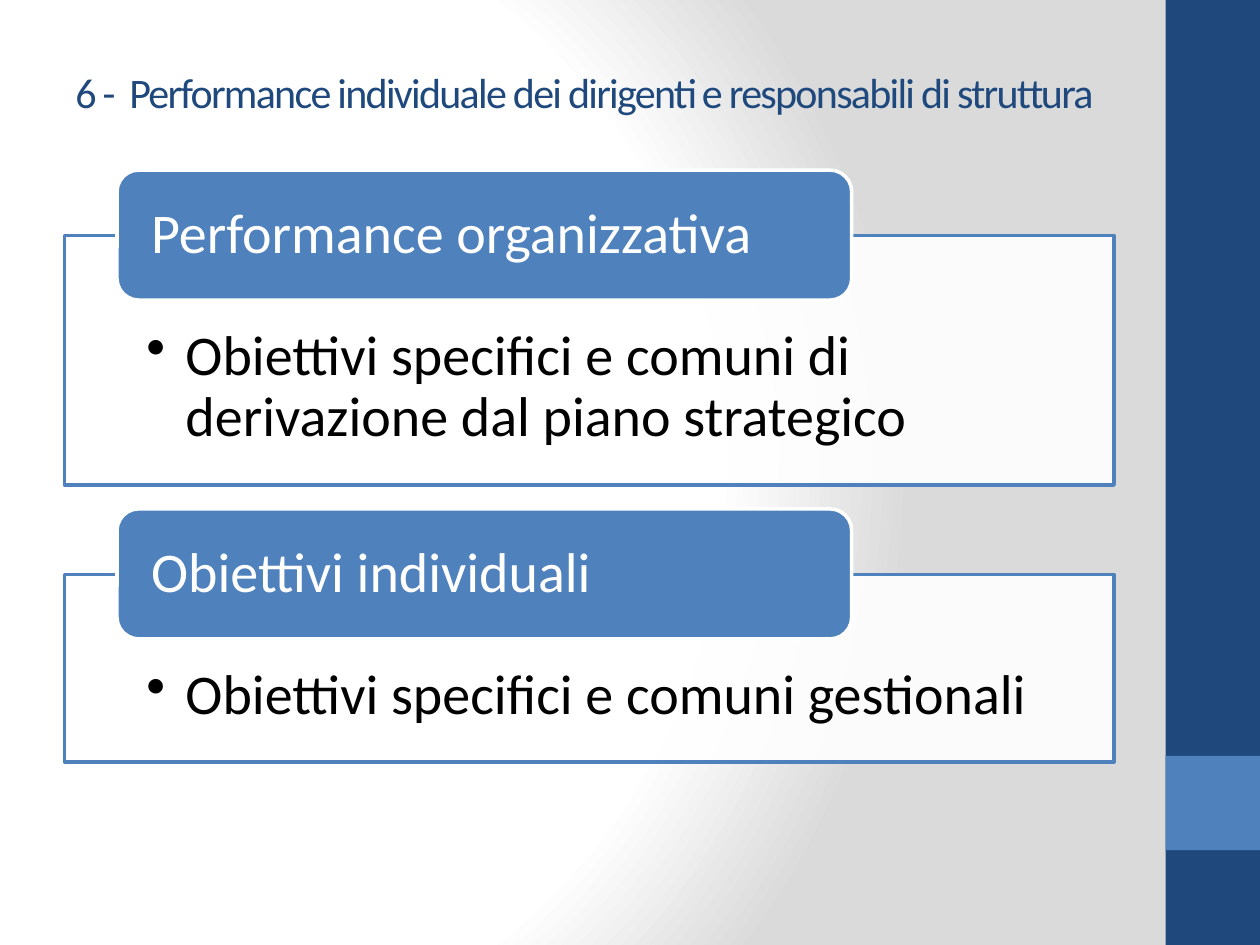
import pptx
import pptx.dml.color
import pptx.enum.shapes
import pptx.enum.text
import pptx.oxml
import pptx.oxml.ns
import pptx.util

Cm = pptx.util.Cm
Pt = pptx.util.Pt
qn = pptx.oxml.ns.qn
Shapes = pptx.enum.shapes.MSO_SHAPE
Anchor = pptx.enum.text.MSO_ANCHOR

COLOURS = {
    "navy": "1F497D",
    "blue": "4F81BD",
    "white": "FFFFFF",
    "grey": "DADADA",
    "black": "000000",
}
GRADIENT = [(0, "white"), (75, "white"), (100, "grey")]
CARDS = [
    ("Performance organizzativa",
     "Obiettivi specifici e comuni di derivazione dal piano strategico", 5.03),
    ("Obiettivi individuali", "Obiettivi specifici e comuni gestionali", 3.78),
]
CARD_LEFT, CARD_TOP, CARD_WIDTH, CARD_GAP = 1.3, 4.75, 21.16, 1.8
LABEL_OFFSET, LABEL_RISE, LABEL_WIDTH, LABEL_HEIGHT = 1.06, 1.32, 14.81, 2.62


class SlideBuilder:
    font = "Calibri"
    body_size = 32
    title_size = 24

    def __init__(self, slide):
        self.slide = slide

    def colour(self, name):
        return pptx.dml.color.RGBColor.from_string(COLOURS[name])

    def background(self):
        self.slide.background.fill.gradient()
        gradient = self.slide.element.find(".//" + qn("a:gradFill"))
        for child in list(gradient):
            gradient.remove(child)
        stops = "".join(
            f'<a:gs pos="{position * 1000}"><a:srgbClr val="{COLOURS[name]}"/></a:gs>'
            for position, name in GRADIENT)
        source = pptx.oxml.parse_xml(
            f'<a:gradFill {pptx.oxml.ns.nsdecls("a")}><a:gsLst>{stops}</a:gsLst>'
            '<a:path path="circle"><a:fillToRect l="20000" t="50000" r="100000" b="50000"/>'
            '</a:path></a:gradFill>')
        for child in list(source):
            gradient.append(child)

    def box(self, kind, left, top, width, height, fill, line=None, opacity=100):
        shape = self.slide.shapes.add_shape(
            kind, Cm(left), Cm(top), Cm(width), Cm(height))
        shape.shadow.inherit = False
        shape.fill.solid()
        shape.fill.fore_color.rgb = self.colour(fill)
        if opacity < 100:
            colour = shape.element.spPr.find(qn("a:solidFill"))[0]
            alpha = colour.makeelement(qn("a:alpha"), {"val": str(opacity * 1000)})
            colour.append(alpha)
        if line:
            shape.line.color.rgb = self.colour(line)
            shape.line.width = Pt(2)
        else:
            shape.line.fill.background()
        return shape

    def text(self, shape, text, size, colour, anchor, insets=None):
        frame = shape.text_frame
        frame.word_wrap = True
        frame.vertical_anchor = anchor
        if insets:
            (frame.margin_left, frame.margin_top,
             frame.margin_right, frame.margin_bottom) = map(Cm, insets)
        paragraph = frame.paragraphs[0]
        paragraph.alignment = pptx.enum.text.PP_ALIGN.LEFT
        run = paragraph.add_run()
        run.text = text
        run.font.name = self.font
        run.font.size = Pt(size)
        run.font.color.rgb = self.colour(colour)
        return paragraph

    def title(self, text):
        shape = self.slide.shapes.add_textbox(Cm(1.27), Cm(0.76), Cm(21.16), Cm(2.16))
        paragraph = self.text(shape, text, self.title_size, "navy", Anchor.MIDDLE)
        paragraph.runs[0]._r.get_or_add_rPr().set("spc", "-100")

    def bullet(self, paragraph):
        properties = paragraph._p.get_or_add_pPr()
        properties.set("marL", str(Cm(0.79)))
        properties.set("indent", str(-Cm(0.79)))
        properties.append(properties.makeelement(qn("a:buChar"), {"char": "•"}))

    def card(self, heading, text, top, height):
        body = self.box(Shapes.RECTANGLE, CARD_LEFT, top, CARD_WIDTH, height,
                        "white", "blue", 90)
        paragraph = self.text(body, text, self.body_size, "black", Anchor.TOP,
                              (1.65, 1.85, 1.65, 0.64))
        paragraph.line_spacing = 0.9
        self.bullet(paragraph)
        label = self.box(Shapes.ROUNDED_RECTANGLE, CARD_LEFT + LABEL_OFFSET,
                         top - LABEL_RISE, LABEL_WIDTH, LABEL_HEIGHT, "blue", "white")
        paragraph = self.text(label, heading, self.body_size, "white", Anchor.MIDDLE,
                              (0.56, 0, 0.56, 0))
        paragraph.line_spacing = 0.9


def main():
    presentation = pptx.Presentation()
    presentation.slide_width = Cm(25.4)
    presentation.slide_height = Cm(19.05)
    builder = SlideBuilder(presentation.slides.add_slide(presentation.slide_layouts[6]))
    builder.background()
    builder.box(Shapes.RECTANGLE, 23.5, 0, 1.9, 19.05, "navy")
    builder.box(Shapes.RECTANGLE, 23.5, 15.24, 1.9, 1.9, "blue")
    builder.title("6 -  Performance individuale dei dirigenti e responsabili di struttura")
    top = CARD_TOP
    for heading, text, height in CARDS:
        builder.card(heading, text, top, height)
        top += height + CARD_GAP
    presentation.save("out.pptx")


if __name__ == "__main__":
    main()
